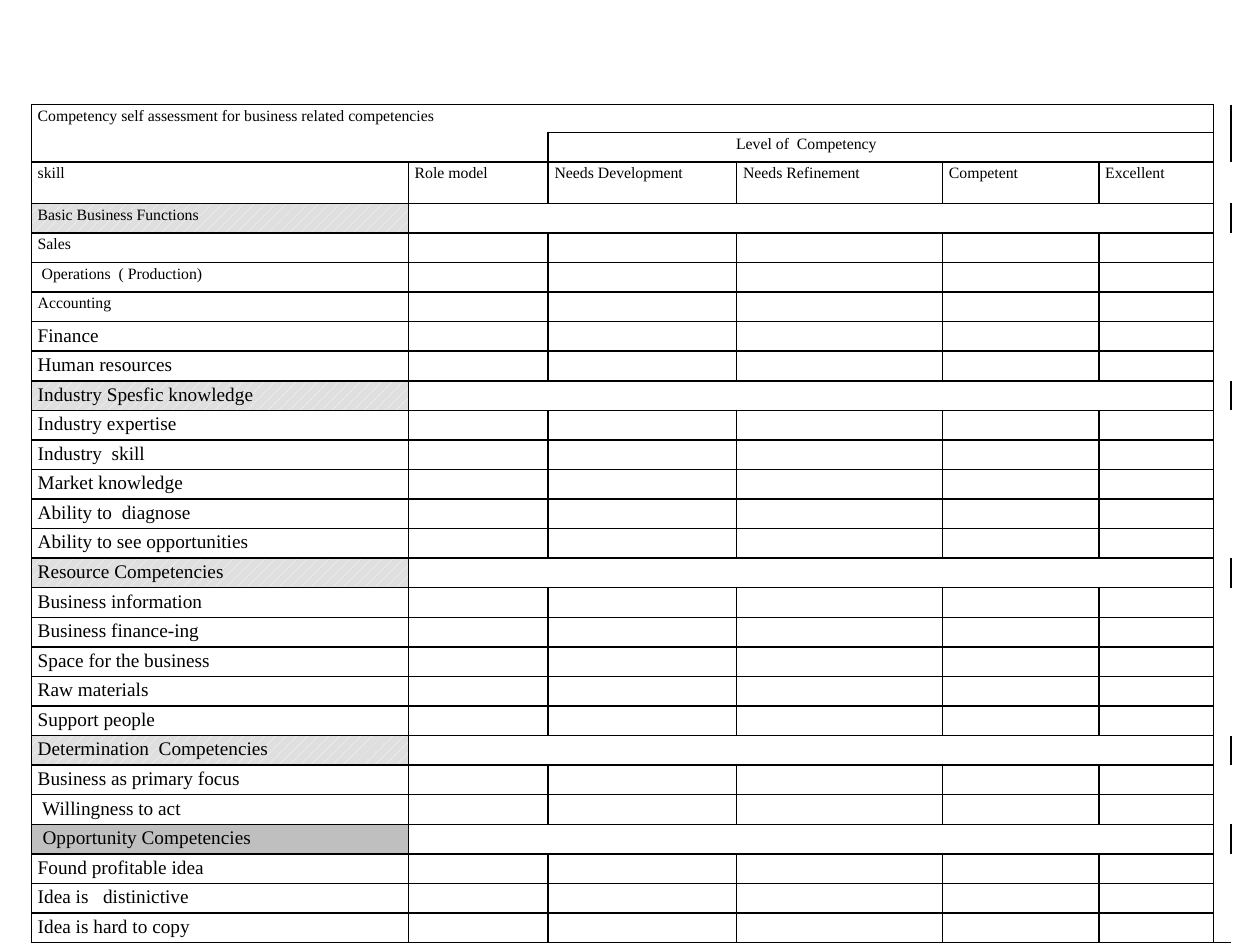
from dataclasses import dataclass

from lxml.etree import SubElement
from pptx import Presentation
from pptx.dml.color import RGBColor
from pptx.enum.dml import MSO_PATTERN_TYPE as Pattern
from pptx.oxml.ns import qn
from pptx.util import Cm, Pt


@dataclass(frozen=True)
class Theme:
    font: str = "Times New Roman"
    ink: str = "000000"
    hatch: str = "FFFFFF"
    section: str = "DFDFDF"
    dark_section: str = "BFBFBF"
    small: int = 9
    large: int = 11
    line: int = 1


theme = Theme()
NO_GRID_STYLE = "{2D5ABB26-0587-4C30-8999-92F81FD0307C}"

TABLE_TOP, TABLE_BOTTOM = 2.11, 19.02
COLUMN_WIDTHS = [7.6, 2.82, 3.8, 4.15, 3.15, 2.31, 0.3]
HEADER_HEIGHTS = [0.56, 0.6, 0.83]
HEADINGS = ["skill", "Role model", "Needs Development", "Needs Refinement", "Competent", "Excellent"]
SECTIONS = {
    "Basic Business Functions": [
        "Sales", " Operations  ( Production)", "Accounting", "Finance", "Human resources"],
    "Industry Spesfic knowledge": [
        "Industry expertise", "Industry  skill", "Market knowledge",
        "Ability to  diagnose", "Ability to see opportunities"],
    "Resource Competencies": [
        "Business information", "Business finance-ing", "Space for the business",
        "Raw materials", "Support people"],
    "Determination  Competencies": ["Business as primary focus", " Willingness to act"],
    " Opportunity Competencies": [
        "Found profitable idea", "Idea is   distinictive", "Idea is hard to copy"],
}
skills = [label for section, names in SECTIONS.items() for label in (section, *names)]
first_skill = len(HEADER_HEIGHTS)
first_large = first_skill + skills.index("Finance")
skill_height = (TABLE_BOTTOM - TABLE_TOP - sum(HEADER_HEIGHTS)) / len(skills)
row_heights = HEADER_HEIGHTS + [skill_height] * len(skills)
last_row = len(row_heights) - 1
last_column = len(COLUMN_WIDTHS) - 1


def write(cell, text, size):
    para = cell.text_frame.paragraphs[0]
    para.line_spacing = 1.15
    span = para.add_run()
    span.text = text
    span.font.name = theme.font
    span.font.size = Pt(size)
    span.font.color.rgb = RGBColor.from_string(theme.ink)


def draw_borders(cell, sides):
    properties = cell._tc.get_or_add_tcPr()
    for side in sides:
        line = SubElement(properties, qn(f"a:ln{side}"), w=str(Pt(theme.line)))
        fill = SubElement(line, qn("a:solidFill"))
        SubElement(fill, qn("a:srgbClr"), val=theme.ink)


deck = Presentation()
deck.slide_width, deck.slide_height = Cm(25.4), Cm(19.05)
page = deck.slides.add_slide(deck.slide_layouts[6])

frame = page.shapes.add_table(
    len(row_heights), len(COLUMN_WIDTHS), Cm(0.63), Cm(TABLE_TOP),
    Cm(sum(COLUMN_WIDTHS)), Cm(sum(row_heights)))
table = frame.table
table.first_row = table.horz_banding = False
table._tbl.tblPr.find(qn("a:tableStyleId")).text = NO_GRID_STYLE
for column, width in zip(table.columns, COLUMN_WIDTHS):
    column.width = Cm(width)
for row, height in zip(table.rows, row_heights):
    row.height = Cm(height)

merges = [(0, 0, 5), (1, 0, 1), (1, 2, 5)]
merges += [(row, 1, 5) for row, label in enumerate(skills, first_skill) if label in SECTIONS]
for row_index, first, last in merges:
    table.cell(row_index, first).merge(table.cell(row_index, last))

for row_index in range(len(row_heights)):
    for column_index in range(len(COLUMN_WIDTHS)):
        cell = table.cell(row_index, column_index)
        cell.margin_left = cell.margin_right = Cm(0.13)
        cell.margin_top = cell.margin_bottom = 0
        if cell.is_spanned:
            sides = ""
        elif column_index == last_column:
            sides = "LB" if row_index == last_row else "L"
        elif row_index == 0:
            sides = "LRT"
        elif row_index == 1 and column_index == 0:
            sides = "LRB"
        else:
            sides = "LRTB"
        draw_borders(cell, sides)
        cell.fill.background()

write(table.cell(0, 0), "Competency self assessment for business related competencies", theme.small)
level = table.cell(1, 2)
level.margin_left = Cm(3.79)
write(level, "Level of  Competency", theme.small)
for column_index, heading in enumerate(HEADINGS):
    write(table.cell(2, column_index), heading, theme.small)

for row_index, label in enumerate(skills, first_skill):
    cell = table.cell(row_index, 0)
    write(cell, label, theme.large if row_index >= first_large else theme.small)
    if label == " Opportunity Competencies":
        cell.fill.solid()
        cell.fill.fore_color.rgb = RGBColor.from_string(theme.dark_section)
    elif label in SECTIONS:
        cell.fill.patterned()
        cell.fill.pattern = Pattern.PERCENT_20
        cell.fill.fore_color.rgb = RGBColor.from_string(theme.hatch)
        cell.fill.back_color.rgb = RGBColor.from_string(theme.section)

for cell in table.iter_cells():
    para = cell.text_frame.paragraphs[0]
    if not para.runs:
        SubElement(para._p, qn("a:endParaRPr"), sz=str(theme.small * 100))

deck.save("out.pptx")
